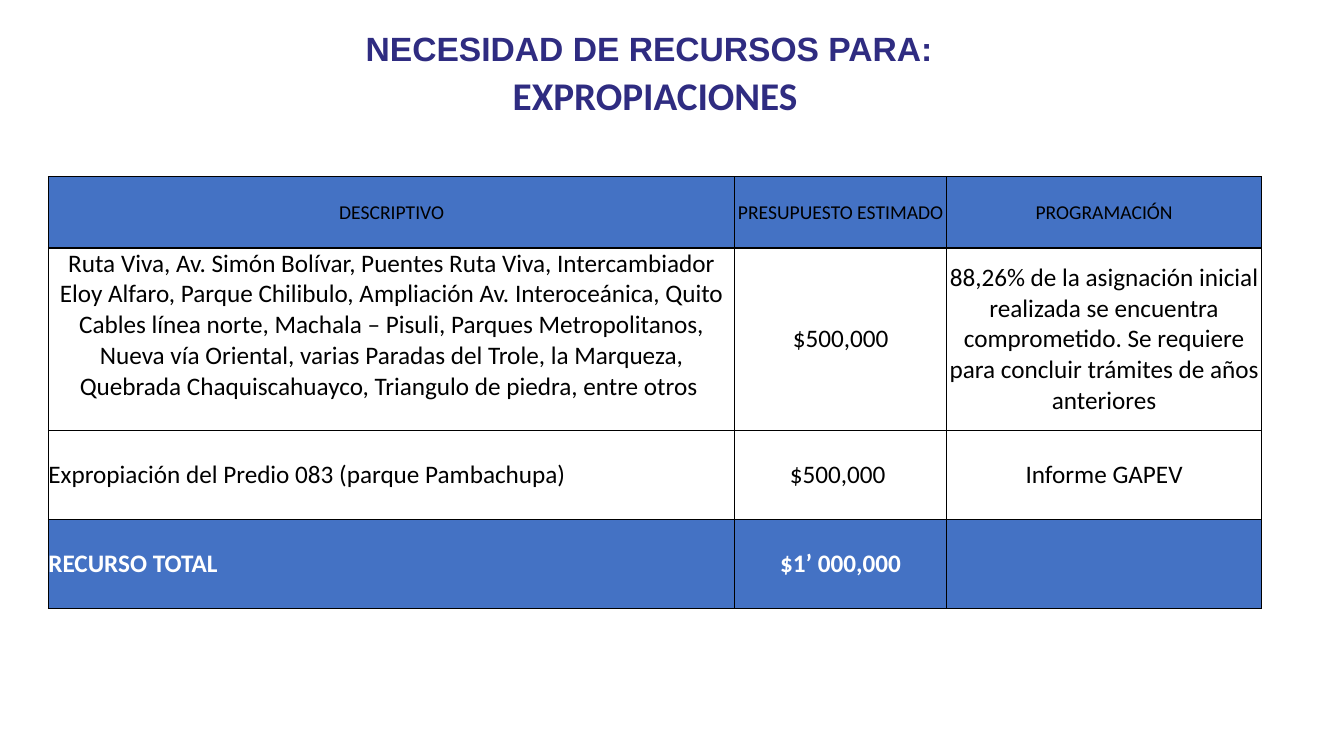
import pptx
import pptx.dml.color
import pptx.enum.text
import pptx.oxml
import pptx.oxml.ns
import pptx.util

Cm = pptx.util.Cm
RGB = pptx.dml.color.RGBColor
ALIGN = pptx.enum.text.PP_ALIGN
ANCHOR = pptx.enum.text.MSO_ANCHOR

NAVY = RGB(0x2F, 0x2C, 0x81)
BLUE = RGB(0x44, 0x72, 0xC4)
WHITE = RGB(0xFF, 0xFF, 0xFF)
BLACK = RGB(0, 0, 0)

TITLE = "NECESIDAD DE RECURSOS PARA: "
TOPIC = "EXPROPIACIONES"
ROWS = [
    ("DESCRIPTIVO", "PRESUPUESTO ESTIMADO", "PROGRAMACIÓN"),
    ("Ruta Viva, Av. Simón Bolívar, Puentes Ruta Viva, Intercambiador Eloy "
     "Alfaro, Parque Chilibulo, Ampliación Av. Interoceánica, Quito Cables "
     "línea norte, Machala – Pisuli, Parques Metropolitanos, Nueva vía "
     "Oriental, varias Paradas del Trole, la Marqueza, Quebrada "
     "Chaquiscahuayco, Triangulo de piedra, entre otros ",
     " $500,000 ",
     "88,26% de la asignación inicial realizada se encuentra comprometido. "
     "Se requiere para concluir trámites de años anteriores"),
    ("Expropiación del Predio 083 (parque Pambachupa)", "$500,000 ",
     "Informe GAPEV"),
    ("RECURSO TOTAL", "$1’ 000,000", ""),
]
WIDTHS = [17.3, 5.33, 7.95]
HEIGHTS = [1.8, 4.6, 2.24, 2.24]


def write(frame, text, size=18, color=BLACK, bold=False, face="Calibri",
          align=ALIGN.CENTER):
    frame.word_wrap = True
    para = frame.paragraphs[0]
    para.alignment = align
    if text:
        run = para.add_run()
        run.text = text
        font = run.font
        font.name, font.size, font.bold = face, pptx.util.Pt(size), bold
        font.color.rgb = color


def edge(cell):
    """Draw a thin black line on all four sides of the cell."""
    props = cell._tc.get_or_add_tcPr()
    for side in "LRTB":
        props.append(pptx.oxml.parse_xml(
            f'<a:ln{side} {pptx.oxml.ns.nsdecls("a")} w="12700">'
            f'<a:solidFill><a:srgbClr val="{BLACK}"/></a:solidFill>'
            f'</a:ln{side}>'))


def head(slide):
    title = slide.shapes.title
    title.left, title.top = Cm(7.14), Cm(0.58)
    title.width, title.height = Cm(18.67), Cm(1.27)
    title.text_frame.auto_size = pptx.enum.text.MSO_AUTO_SIZE.NONE
    title.text_frame.vertical_anchor = ANCHOR.TOP
    write(title.text_frame, TITLE, size=24, color=NAVY, bold=True, face="Arial")
    topic = slide.shapes.add_textbox(Cm(7.21), Cm(1.68), Cm(18.6), Cm(1.45))
    write(topic.text_frame, TOPIC, size=28, color=NAVY, bold=True)


def grid(slide):
    table = slide.shapes.add_table(
        len(ROWS), len(WIDTHS), Cm(1.22), Cm(4.45),
        Cm(sum(WIDTHS)), Cm(sum(HEIGHTS))).table
    table.first_row = table.horz_banding = False
    for col, width in zip(table.columns, WIDTHS):
        col.width = Cm(width)
    last = len(ROWS) - 1
    for r, texts in enumerate(ROWS):
        table.rows[r].height = Cm(HEIGHTS[r])
        for c, text in enumerate(texts):
            cell = table.cell(r, c)
            cell.margin_left = cell.margin_right = 0
            cell.margin_top = cell.margin_bottom = 0
            cell.vertical_anchor = ANCHOR.TOP if (r, c) == (1, 0) else ANCHOR.MIDDLE
            edge(cell)
            cell.fill.solid()
            cell.fill.fore_color.rgb = BLUE if r in (0, last) else WHITE
            write(cell.text_frame, text, size=18 if r else 14,
                  color=WHITE if r == last else BLACK, bold=r == last,
                  align=ALIGN.LEFT if c == 0 and r > 1 else ALIGN.CENTER)


def main():
    deck = pptx.Presentation()
    deck.slide_width, deck.slide_height = Cm(33.87), Cm(19.05)
    slide = deck.slides.add_slide(deck.slide_layouts[5])
    head(slide)
    grid(slide)
    deck.save("out.pptx")


if __name__ == "__main__":
    main()
